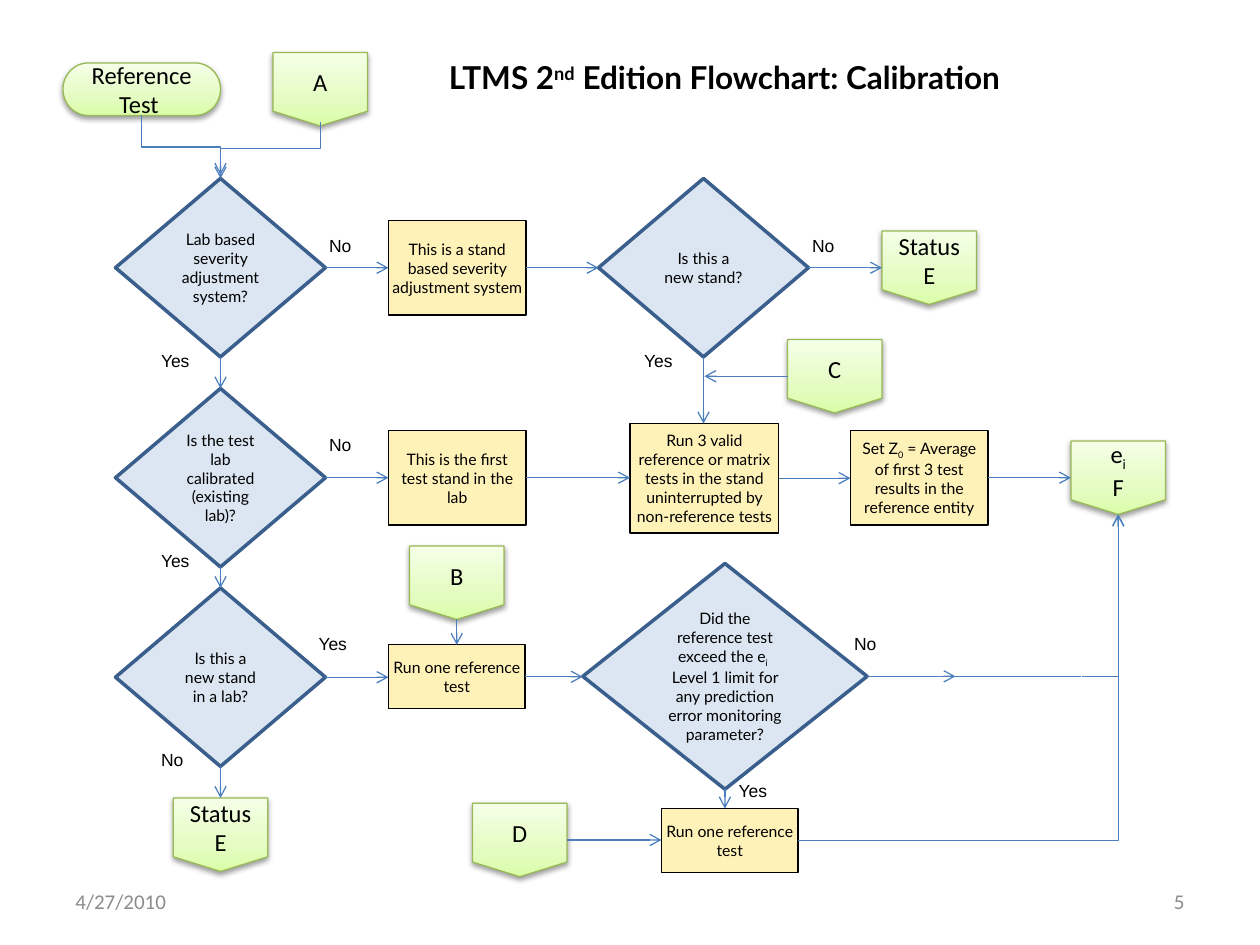
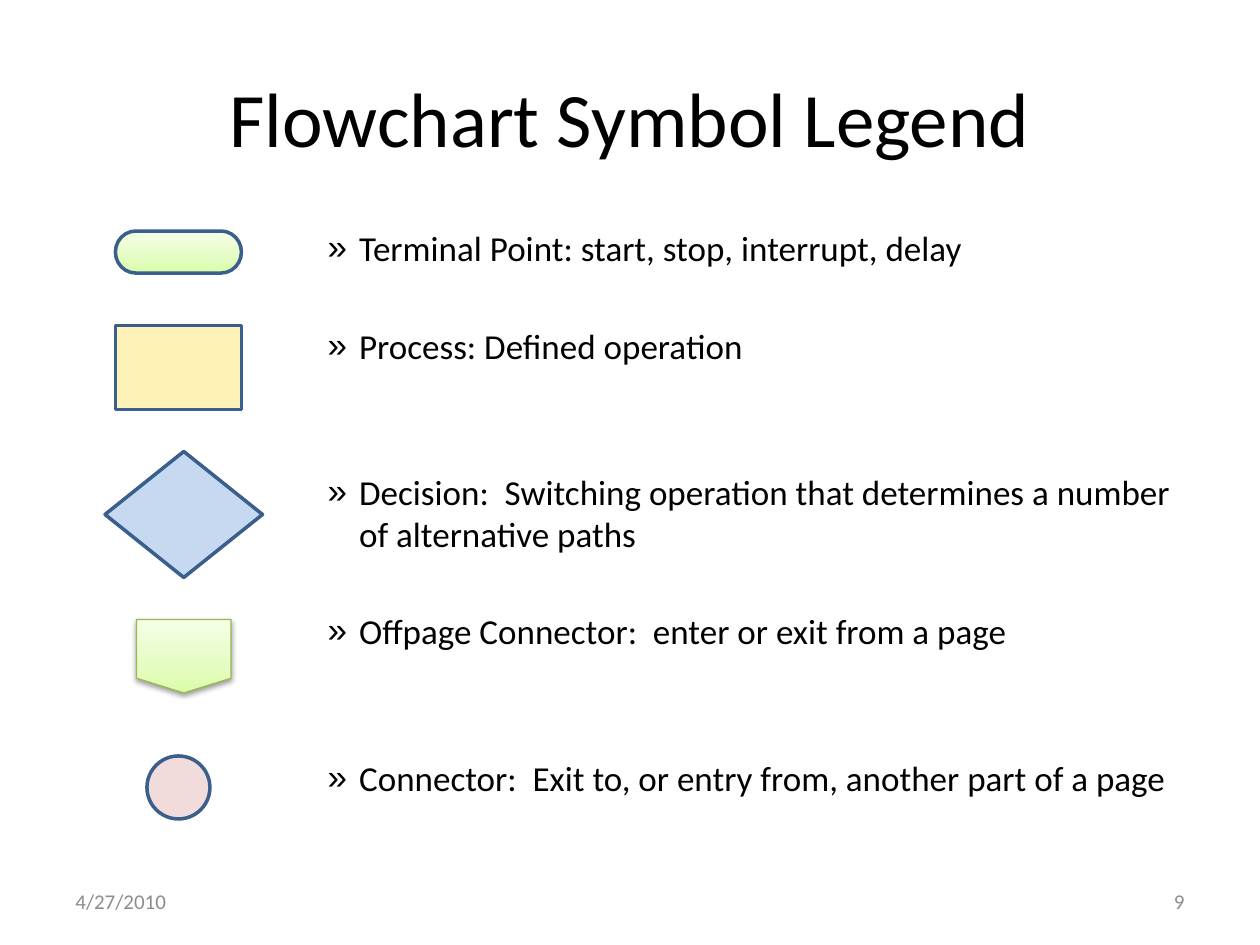
"""Build the calibration flowchart page and the legend of its symbols."""
import copy

import pptx
import pptx.dml.color
import pptx.enum.shapes
import pptx.enum.text
import pptx.oxml
import pptx.oxml.ns
import pptx.util

Pt = pptx.util.Pt
RGBColor = pptx.dml.color.RGBColor
Shape = pptx.enum.shapes.MSO_SHAPE
Connector = pptx.enum.shapes.MSO_CONNECTOR
Align = pptx.enum.text.PP_ALIGN
Anchor = pptx.enum.text.MSO_ANCHOR
qn = pptx.oxml.ns.qn

BLACK = RGBColor(0x00, 0x00, 0x00)
GREY = RGBColor(0x8C, 0x8C, 0x8C)
YELLOW = RGBColor(0xFF, 0xF2, 0xB9)
PALE_BLUE = RGBColor(0xDC, 0xE6, 0xF2)
LEGEND_BLUE = RGBColor(0xC6, 0xD9, 0xF1)
PINK = RGBColor(0xF2, 0xDC, 0xDB)
NAVY = RGBColor(0x3A, 0x5F, 0x8C)
GREEN_EDGE = RGBColor(0x98, 0xB9, 0x55)
ARROW_BLUE = RGBColor(0x4B, 0x7E, 0xBC)
GREEN_FADE = [
    (0, RGBColor(0xDA, 0xFD, 0xA7)),
    (0.35, RGBColor(0xE4, 0xFC, 0xC2)),
    (1, RGBColor(0xF5, 0xFF, 0xE7)),
]

DATE = "4/27/2010"
SUB, SUPER = -25, 30
DEFAULT_INSETS = (7.2, 3.6, 7.2, 3.6)
SMALL_TEXT = dict(size=9, font="Lato")
LARGE_TEXT = dict(size=14, font="Calibri")
GREEN = dict(fill=GREEN_FADE, edge=GREEN_EDGE, weight=0.75, shadow=True)

SYMBOLS = {
    "terminal": dict(preset=Shape.FLOWCHART_TERMINATOR, **GREEN),
    "process": dict(preset=Shape.FLOWCHART_PROCESS, fill=YELLOW, edge=BLACK, weight=0.75),
    "decision": dict(preset=Shape.FLOWCHART_DECISION, fill=PALE_BLUE, edge=NAVY, weight=2),
    "offpage": dict(preset=Shape.FLOWCHART_OFFPAGE_CONNECTOR, **GREEN),
    "connector": dict(preset=Shape.FLOWCHART_CONNECTOR, fill=PINK, edge=NAVY, weight=2),
}
SYMBOL_TEXT = {
    "terminal": LARGE_TEXT,
    "process": dict(insets=(2, 1.5, 2, 1.5), **SMALL_TEXT),
    "decision": SMALL_TEXT,
    "offpage": LARGE_TEXT,
}
SYMBOL_SIZE = {
    "terminal": (90, 30),
    "process": (78.5, 54),
    "decision": (120, 102),
    "offpage": (54, 42),
}

FLOW_TITLE = [("LTMS 2", 0), ("nd", SUPER), (" Edition Flowchart: Calibration", 0)]
AVERAGE_TEXT = [
    ("Set Z", 0), ("0", SUB),
    (" = Average of first 3 test results in the reference entity", 0),
]
LIMIT_TEXT = [
    ("Did the reference test exceed the e", 0), ("i", SUB),
    ("  Level 1 limit for any prediction error monitoring parameter?", 0),
]
NODES = {
    "start": ("terminal", 36, 36, "Reference Test "),
    "A": ("offpage", 156, 30, "A"),
    "lab based": ("decision", 66, 102, "Lab based severity adjustment system?"),
    "calibrated": ("decision", 66, 222, "Is the test lab calibrated (existing lab)?"),
    "stand in lab": ("decision", 66, 336, "Is this a new stand in a lab?"),
    "lab status": ("offpage", 99, 456, "Status\nE"),
    "stand based": ("process", 222, 126, "This is a stand based severity adjustment system"),
    "new stand": ("decision", 342, 102, "Is this a new stand?"),
    "stand status": ("offpage", 504, 132, "Status\nE"),
    "first stand": ("process", 222, 246, "This is the first test stand in the lab"),
    "three tests": (
        "process", 360, 242,
        "Run 3 valid reference or matrix tests in the stand "
        "uninterrupted by non-reference tests", (85, 62.5)),
    "C": ("offpage", 450, 194, "C"),
    "average": ("process", 486, 246, AVERAGE_TEXT),
    "F": ("offpage", 612, 252, [("e", 0), ("i", SUB), ("\nF", 0)]),
    "B": ("offpage", 234, 312, "B"),
    "one test": ("process", 222, 368.5, "Run one reference test", (78, 36.5)),
    "limit": ("decision", 333, 322, LIMIT_TEXT, (162.5, 129)),
    "D": ("offpage", 270, 459, "D"),
    "repeat test": ("process", 378, 462, "Run one reference test", (78, 36.5)),
}
ANSWERS = [
    ("No", 186, 132), ("No", 462, 132), ("No", 186, 246),
    ("Yes", 90, 198), ("Yes", 366, 198), ("Yes", 90, 312),
    ("Yes", 180, 360), ("No", 486, 360), ("No", 90, 426), ("Yes", 420, 444),
]
ACROSS = [
    ("lab based", "stand based"), ("stand based", "new stand"),
    ("new stand", "stand status"), ("calibrated", "first stand"),
    ("first stand", "three tests"), ("three tests", "average"),
    ("average", "F"), ("stand in lab", "one test"),
    ("one test", "limit"), ("D", "repeat test"),
]
DOWN = [
    ("lab based", "calibrated"), ("calibrated", "stand in lab"),
    ("stand in lab", "lab status"), ("new stand", "three tests"),
    ("B", "one test"), ("limit", "repeat test"),
]
ENTRY_ELBOWS = [((81, 66), (126, 102)), ((183, 70), (126, 100))]
LIMIT_ARROW_END, LIMIT_LINE_END = 546, 618

LEGEND = [
    ("terminal", (66, 132, 72, 24), dict(edge=NAVY, weight=2, shadow=False),
     "Terminal Point: start, stop, interrupt, delay", 0),
    ("process", (66, 186, 72, 48), dict(edge=NAVY, weight=2), "Process: Defined operation", 1),
    ("decision", (60, 258, 90, 72), dict(fill=LEGEND_BLUE),
     "Decision:  Switching operation that determines a number of alternative paths", 2),
    ("offpage", (78, 354, 54, 42), {}, "Offpage Connector:  enter or exit from a page", 1),
    ("connector", (84, 432, 36, 36), {},
     "Connector:  Exit to, or entry from, another part of a page", 2),
]
LINE_HEIGHT, LINE_PITCH = 24.4, 28


def write(frame, text, size, font, color=BLACK, bold=False, align=Align.CENTER,
          anchor=Anchor.MIDDLE, insets=DEFAULT_INSETS):
    """Fill a text frame with a string or with (text, baseline) spans."""
    frame.word_wrap = True
    frame.auto_size = pptx.enum.text.MSO_AUTO_SIZE.NONE
    frame.vertical_anchor = anchor
    frame.margin_left, frame.margin_top, frame.margin_right, frame.margin_bottom = map(Pt, insets)
    para = frame.paragraphs[0]
    para.alignment = align
    for piece, baseline in [(text, 0)] if isinstance(text, str) else text:
        for index, line in enumerate(piece.split("\n")):
            if index:
                para = frame.add_paragraph()
                para.alignment = align
            if not line:
                continue
            span = para.add_run()
            span.text = line
            span.font.size, span.font.name, span.font.bold = Pt(size), font, bold
            span.font.color.rgb = color
            if baseline:
                span.font._element.set("baseline", str(baseline * 1000))


def add_text(page, area, text, **text_format):
    """Add a text box."""
    box = page.shapes.add_textbox(*map(Pt, area))
    write(box.text_frame, text, **text_format)


def add_symbol(page, area, preset, fill, edge, weight, shadow=False):
    """Add one flowchart symbol and return it."""
    box = page.shapes.add_shape(preset, *map(Pt, area))
    box.shadow.inherit = False
    properties = box._element.spPr
    if fill is GREEN_FADE:
        box.fill.gradient()
        box.fill.gradient_angle = 90
        stops = properties.find(".//" + qn("a:gsLst"))
        stops.insert(1, copy.deepcopy(stops[0]))
        for stop, (position, color) in zip(box.fill.gradient_stops, GREEN_FADE):
            stop.position, stop.color.rgb = position, color
    else:
        box.fill.solid()
        box.fill.fore_color.rgb = fill
    box.line.color.rgb, box.line.width = edge, Pt(weight)
    if shadow:
        properties.find(qn("a:effectLst")).append(pptx.oxml.parse_xml(
            '<a:outerShdw xmlns:a="http://schemas.openxmlformats.org/drawingml/2006/main" '
            'blurRad="40000" dist="20000" dir="5400000" rotWithShape="0">'
            '<a:srgbClr val="000000"><a:alpha val="38000"/></a:srgbClr></a:outerShdw>'))
    return box


def add_line(page, start, end, kind=Connector.STRAIGHT, arrow=True):
    """Add a flow line and return its shape properties."""
    line = page.shapes.add_connector(kind, *map(Pt, start + end))
    line.line.color.rgb, line.line.width = ARROW_BLUE, Pt(0.75)
    properties = line._element.spPr
    if arrow:
        stroke = properties.find(qn("a:ln"))
        stroke.append(stroke.makeelement(qn("a:tailEnd"), {"type": "arrow"}))
    properties.append(properties.makeelement(qn("a:effectLst"), {}))
    return properties


def add_corner(page, start, end):
    """Add an arrow that runs across and then turns once."""
    properties = add_line(page, start, end, Connector.ELBOW)
    properties.find(qn("a:prstGeom")).set("prst", "bentConnector2")


def add_drop(page, start, end):
    """Add an arrow that runs down, across and down, as a turned elbow."""
    middle_x, middle_y = (start[0] + end[0]) / 2, (start[1] + end[1]) / 2
    half_x, half_y = (end[0] - start[0]) / 2, (end[1] - start[1]) / 2
    properties = add_line(page, (middle_x - half_y, middle_y + half_x),
                          (middle_x + half_y, middle_y - half_x), Connector.ELBOW)
    properties.find(qn("a:xfrm")).set("rot", "5400000")


def add_page(deck, layout, number):
    """Add a page with its date and number."""
    page = deck.slides.add_slide(deck.slide_layouts[layout])
    for left, text, align in ((36, DATE, Align.LEFT), (516, number, Align.RIGHT)):
        add_text(page, (left, 500.5, 168, 28.5), text, size=12, font="Calibri",
                 color=GREY, align=align)
    return page


def set_title(page, area, text, **text_format):
    """Place and fill the title placeholder."""
    title = page.shapes.title
    title.left, title.top, title.width, title.height = map(Pt, area)
    write(title.text_frame, text, **text_format)


def build_flowchart(deck):
    """Build the calibration flowchart."""
    page = add_page(deck, 5, "5")
    set_title(page, (228, 26, 372, 36), FLOW_TITLE, size=18, font="Lato", bold=True,
              insets=(3.6, 3, 3.6, 3))
    areas = {}
    for name, (kind, left, top, text, *size) in NODES.items():
        areas[name] = (left, top, *(size[0] if size else SYMBOL_SIZE[kind]))
        box = add_symbol(page, areas[name], **SYMBOLS[kind])
        write(box.text_frame, text, **SYMBOL_TEXT[kind])
    for text, left, top in ANSWERS:
        add_text(page, (left, top, 29, 14.5), text, size=10, font="Arial",
                 align=Align.LEFT, anchor=Anchor.TOP, insets=(2, 2, 0, 0))

    def right(name):
        left, top, width, height = areas[name]
        return left + width, top + height / 2

    def bottom(name):
        left, top, width, height = areas[name]
        return left + width / 2, top + height

    for source, target in ACROSS:
        start = right(source)
        add_line(page, start, (areas[target][0], start[1]))
    for source, target in DOWN:
        start = bottom(source)
        add_line(page, start, (start[0], areas[target][1]))
    for start, end in ENTRY_ELBOWS:
        add_drop(page, start, end)
    entry_y = right("C")[1]
    add_line(page, (areas["C"][0], entry_y), (bottom("three tests")[0], entry_y))

    limit = right("limit")
    arrow_end, line_end = (LIMIT_ARROW_END, limit[1]), (LIMIT_LINE_END, limit[1])
    add_line(page, limit, arrow_end)
    add_line(page, arrow_end, line_end, arrow=False)
    for start in (line_end, right("repeat test")):
        add_corner(page, start, bottom("F"))


def build_legend(deck):
    """Build the legend of symbols."""
    page = add_page(deck, 1, "9")
    set_title(page, (36, 21.6, 648, 90), "Flowchart Symbol Legend", size=44, font="Calibri")
    body = page.placeholders[1]
    body.left, body.top, body.width, body.height = map(Pt, (36, 126, 648, 356.4))
    write(body.text_frame, "\n".join(row[3] for row in LEGEND), size=20, font="Calibri",
          align=Align.LEFT, anchor=Anchor.TOP)
    for para, (kind, area, changes, text, skipped) in zip(body.text_frame.paragraphs, LEGEND):
        para.level = 4
        para.space_before = Pt(LINE_PITCH * (skipped + 1) - LINE_HEIGHT)
        add_symbol(page, area, **{**SYMBOLS[kind], **changes})


def main():
    """Build and save the deck."""
    deck = pptx.Presentation()
    deck.slide_width, deck.slide_height = Pt(720), Pt(540)
    build_flowchart(deck)
    build_legend(deck)
    deck.save("out.pptx")


if __name__ == "__main__":
    main()
